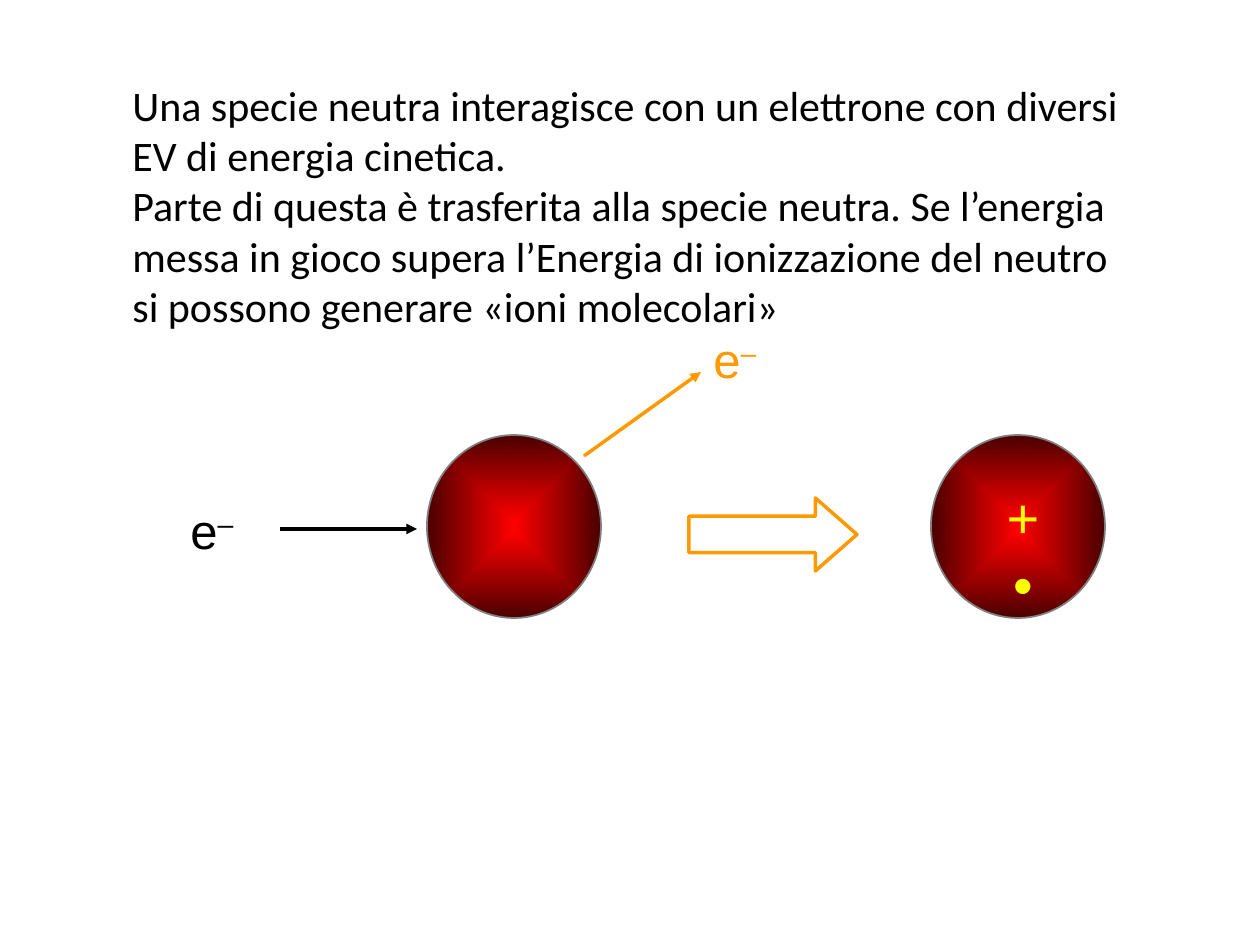
from lxml import etree
from pptx import Presentation
from pptx.dml.color import RGBColor
from pptx.enum.shapes import MSO_CONNECTOR, MSO_SHAPE
from pptx.enum.text import MSO_AUTO_SIZE, PP_ALIGN
from pptx.oxml.ns import qn
from pptx.util import Pt

OVAL, RIGHT_ARROW = MSO_SHAPE.OVAL, MSO_SHAPE.RIGHT_ARROW
STRAIGHT = MSO_CONNECTOR.STRAIGHT
LEFT, CENTER = PP_ALIGN.LEFT, PP_ALIGN.CENTER
GROW = MSO_AUTO_SIZE.SHAPE_TO_FIT_TEXT
SCALE = 914400 / 126

THEME = {
    "black": RGBColor(0x00, 0x00, 0x00),
    "orange": RGBColor(0xFF, 0x99, 0x00),
    "yellow": RGBColor(0xFF, 0xFF, 0x00),
    "outline": RGBColor(0x80, 0x80, 0x80),
    "sphere": (RGBColor(0xFF, 0x00, 0x00), RGBColor(0x4B, 0x00, 0x00)),
    "body_font": "Calibri",
    "label_font": "Arial",
    "body_size": 24,
    "electron_size": 28,
    "charge_size": 32,
    "line_spacing": 36,
}

EXPLANATION = [
    "Una specie neutra interagisce con un elettrone con diversi EV di energia cinetica.",
    "Parte di questa è trasferita alla specie neutra. Se l’energia messa in gioco supera "
    "l’Energia di ionizzazione del neutro si possono generare «ioni molecolari»",
]
EXPLANATION_BOX = (120, 73, 1020, 267)
SPHERES = [(427, 435, 174, 183), (931, 435, 174, 183)]
ELECTRONS = [((178, 490, 70, 72), "black"), ((701, 319, 68, 76), "orange")]
PATHS = [((280, 529), (417, 529), "black"), ((584, 456), (701, 372), "orange")]
CHARGE, CHARGE_BOX = "+\v•", (994, 476, 58, 96)
REACTION_BOX = (689, 498, 168, 73)


def px(*values):
    return [round(value * SCALE) for value in values]


def add_text(slide, box, lines, font, size, color, alignment=LEFT, wrap=False):
    text_frame = slide.shapes.add_textbox(*px(*box)).text_frame
    text_frame.word_wrap = wrap
    text_frame.auto_size = GROW
    text_frame.text = "\n".join(lines)
    for paragraph in text_frame.paragraphs:
        paragraph.alignment = alignment
        for run in paragraph.runs:
            run.font.name = THEME[font]
            run.font.size = Pt(THEME[size])
            run.font.color.rgb = THEME[color]
    return text_frame


def add_electron(slide, box, color):
    text_frame = add_text(slide, box, ["e"], "label_font", "electron_size", color)
    paragraph = text_frame.paragraphs[0]
    paragraph.line_spacing = Pt(THEME["line_spacing"])
    sign = paragraph.add_run()
    sign.text = "–"
    sign.font.name = THEME["label_font"]
    sign.font.size = Pt(THEME["electron_size"])
    sign.font.color.rgb = THEME[color]
    sign.font._element.set("baseline", "30000")


def add_sphere(slide, box):
    sphere = slide.shapes.add_shape(OVAL, *px(*box))
    sphere.shadow.inherit = False
    sphere.line.color.rgb = THEME["outline"]
    sphere.line.width = Pt(1)
    sphere.fill.gradient()
    for stop, color in zip(sphere.fill.gradient_stops, THEME["sphere"]):
        stop.color.rgb = color
    gradient = sphere._element.spPr.find(qn("a:gradFill"))
    gradient.remove(gradient.find(qn("a:lin")))
    shading = etree.SubElement(gradient, qn("a:path"), {"path": "shape"})
    center = dict.fromkeys("ltrb", "50000")
    etree.SubElement(shading, qn("a:fillToRect"), center)


def add_electron_path(slide, start, end, color):
    connector = slide.shapes.add_connector(STRAIGHT, *px(*start, *end))
    connector.line.color.rgb = THEME[color]
    connector.line.width = Pt(2)
    etree.SubElement(connector.line._get_or_add_ln(), qn("a:tailEnd"), {"type": "triangle"})
    etree.SubElement(connector._element.spPr, qn("a:effectLst"))


def add_reaction_arrow(slide):
    arrow = slide.shapes.add_shape(RIGHT_ARROW, *px(*REACTION_BOX))
    arrow.shadow.inherit = False
    arrow.adjustments[0] = 0.5
    arrow.adjustments[1] = 0.57
    arrow.fill.background()
    arrow.line.color.rgb = THEME["orange"]
    arrow.line.width = Pt(2)


def main():
    presentation = Presentation()
    presentation.slide_width, presentation.slide_height = px(1260, 945)
    slide = presentation.slides.add_slide(presentation.slide_layouts[6])
    for box in SPHERES:
        add_sphere(slide, box)
    for start, end, color in PATHS:
        add_electron_path(slide, start, end, color)
    for box, color in ELECTRONS:
        add_electron(slide, box, color)
    add_text(slide, CHARGE_BOX, [CHARGE], "label_font", "charge_size", "yellow", CENTER)
    add_reaction_arrow(slide)
    add_text(slide, EXPLANATION_BOX, EXPLANATION, "body_font", "body_size", "black", wrap=True)
    presentation.save("out.pptx")


if __name__ == "__main__":
    main()
